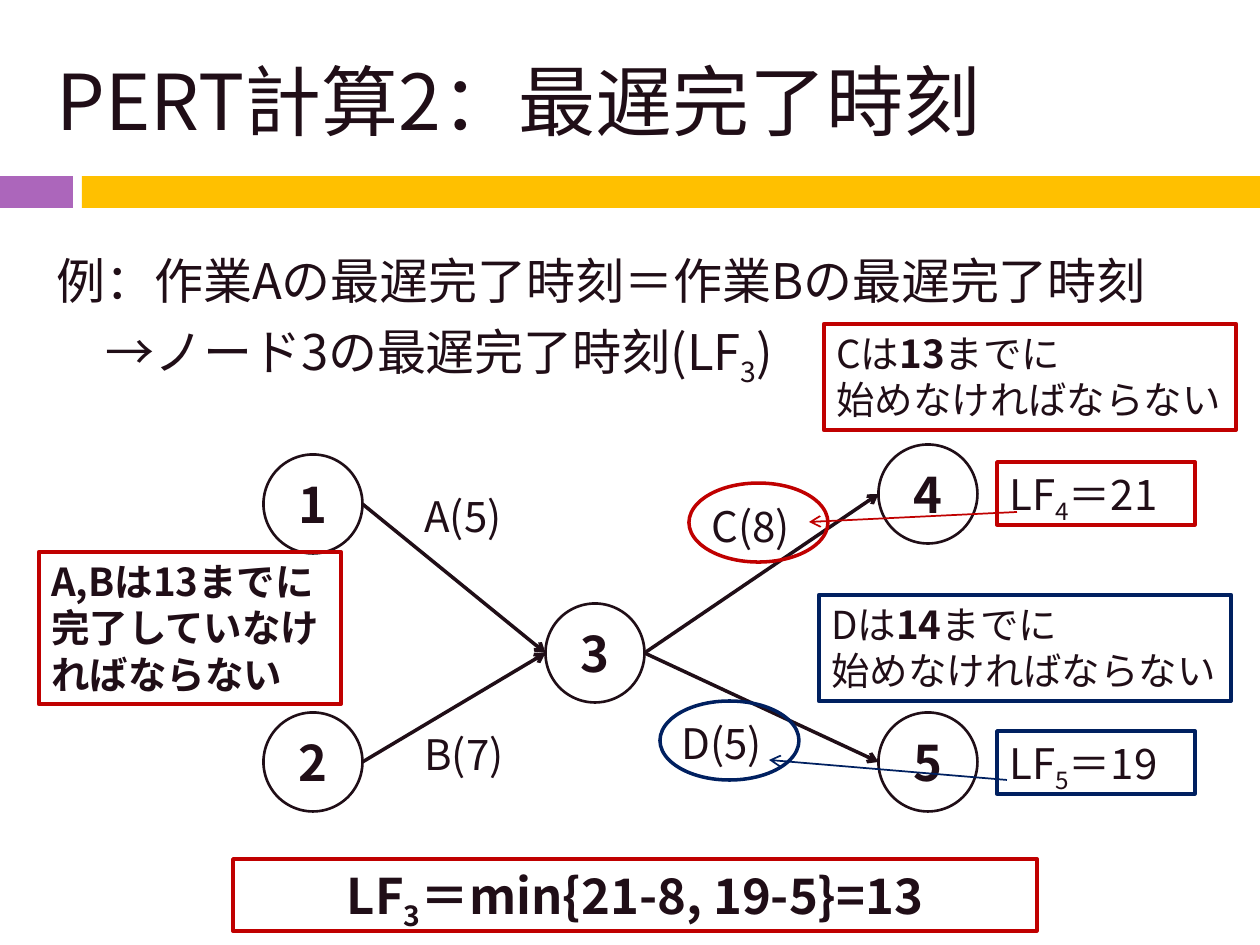
from dataclasses import dataclass

from lxml.etree import SubElement
from pptx import Presentation
from pptx.dml.color import RGBColor
from pptx.enum.shapes import MSO_CONNECTOR, MSO_SHAPE
from pptx.enum.text import MSO_ANCHOR, PP_ALIGN
from pptx.oxml.ns import qn
from pptx.util import Emu, Pt

PX = 914400 / 126


@dataclass(frozen=True)
class Theme:
    font: str = "Noto Sans CJK JP"
    ink: str = "200E17"
    purple: str = "AC66BB"
    amber: str = "FFC000"
    red: str = "C00000"
    navy: str = "002060"
    title: int = 44
    body: int = 28
    label: int = 24
    note: int = 22


THEME = Theme()


def px(value):
    return Emu(round(value * PX))


def write(shape, paragraphs, size, bold=False, align=PP_ALIGN.LEFT,
          anchor=MSO_ANCHOR.TOP):
    """Each paragraph is a list of (text, style); style is "", "sub" or "bold"."""
    frame = shape.text_frame
    frame.word_wrap = True
    frame.vertical_anchor = anchor
    frame.text = "\n".join("" for _ in paragraphs)
    for paragraph, parts in zip(frame.paragraphs, paragraphs):
        paragraph.alignment = align
        for text, style in parts:
            run = paragraph.add_run()
            run.text = text
            run.font.size = Pt(size)
            run.font.name = THEME.font
            run.font.bold = bold or style == "bold"
            run.font.color.rgb = RGBColor.from_string(THEME.ink)
            properties = run.font._element
            SubElement(properties, qn("a:ea")).set("typeface", THEME.font)
            if style == "sub":
                properties.set("baseline", "-25000")
    return frame


def add_text(slide, box, paragraphs, size, **options):
    shape = slide.shapes.add_textbox(*map(px, box))
    return write(shape, paragraphs, size, **options)


def add_outline(slide, kind, box, color, width):
    shape = slide.shapes.add_shape(kind, *map(px, box))
    shape.shadow.inherit = False
    shape.fill.background()
    shape.line.color.rgb = RGBColor.from_string(color)
    shape.line.width = Pt(width)
    return shape


def add_arrow(slide, start, end, color, width):
    arrow = slide.shapes.add_connector(
        MSO_CONNECTOR.STRAIGHT, *map(px, (*start, *end)))
    arrow.line.color.rgb = RGBColor.from_string(color)
    arrow.line.width = Pt(width)
    SubElement(arrow.line._get_or_add_ln(), qn("a:tailEnd")).set("type", "arrow")
    SubElement(arrow._element.spPr, qn("a:effectLst"))


def add_header(slide, left, top, width):
    # Title
    add_text(slide, (left + 44, top + 32, 1171, 136),
             [[("PERT計算2：最遅完了時刻", "")]], THEME.title,
             anchor=MSO_ANCHOR.MIDDLE)
    # Two-colour band
    for start, end, color in ((0, 73, THEME.purple), (82, width, THEME.amber)):
        band = slide.shapes.add_shape(
            MSO_SHAPE.RECTANGLE,
            *map(px, (left + start, top + 176, end - start, 32)))
        band.shadow.inherit = False
        band.fill.solid()
        band.fill.fore_color.rgb = RGBColor.from_string(color)
        band.line.fill.background()


def add_example(slide, box):
    frame = add_text(slide, box, [
        [("例：作業Aの最遅完了時刻＝作業Bの最遅完了時刻", "")],
        [("　→ノード3の最遅完了時刻(LF", ""), ("3", "sub"), (")", "")],
    ], THEME.body)
    for paragraph in frame.paragraphs:
        paragraph.space_before = Pt(7)
        properties = paragraph._p.get_or_add_pPr()
        properties.set("marL", str(px(44)))
        properties.set("indent", str(-px(44)))


def add_network(slide, left, top):
    diameter = 99
    radius = diameter / 2
    centers = {"1": (50, 60), "2": (50, 318), "3": (332, 209),
               "4": (665, 50), "5": (665, 318)}
    centers = {name: (left + x, top + y) for name, (x, y) in centers.items()}

    # Nodes
    for name, (x, y) in centers.items():
        node = add_outline(slide, MSO_SHAPE.OVAL,
                           (x - radius, y - radius, diameter, diameter),
                           THEME.ink, 1.5)
        write(node, [[(name, "")]], THEME.body, bold=True,
              align=PP_ALIGN.CENTER, anchor=MSO_ANCHOR.MIDDLE)

    # Activities run from the right of one node to the left of the next
    activities = (("1", "3", "A(5)", 149, 40), ("2", "3", "B(7)", 149, 278),
                  ("3", "4", "C(8)", 436, 50), ("3", "5", "D(5)", 406, 267))
    for source, target, label, x, y in activities:
        (start_x, start_y), (end_x, end_y) = centers[source], centers[target]
        add_arrow(slide, (start_x + radius, start_y), (end_x - radius, end_y),
                  THEME.ink, 2)
        add_text(slide, (left + x, top + y, 129, 63), [[(label, "")]],
                 THEME.label)


def add_finish_time(slide, box, node, time, color):
    shape = add_outline(slide, MSO_SHAPE.RECTANGLE, box, color, 2)
    write(shape, [[("LF", ""), (node, "sub"), (f"＝{time}", "")]], THEME.label)


def add_start_limit(slide, box, activity, time, color):
    shape = add_outline(slide, MSO_SHAPE.RECTANGLE, box, color, 2.5)
    write(shape, [[(f"{activity}は", ""), (time, "bold"), ("までに", "")],
                  [("始めなければならない", "")]], THEME.note)


def add_branch(slide, activity, node, finish, limit, color,
               finish_box, limit_box, ring_box, arrow):
    """Annotations of one activity that leaves node 3."""
    add_finish_time(slide, finish_box, node, finish, color)
    add_outline(slide, MSO_SHAPE.OVAL, ring_box, color, 2)
    add_start_limit(slide, limit_box, activity, limit, color)
    add_arrow(slide, *arrow, color, 1)


def add_conclusion(slide, deadline_box, result_box):
    deadline = add_outline(slide, MSO_SHAPE.RECTANGLE, deadline_box,
                           THEME.red, 2.5)
    write(deadline, [[("A,Bは13までに完了していなければならない", "")]],
          THEME.note, bold=True)
    result = add_outline(slide, MSO_SHAPE.RECTANGLE, result_box, THEME.red, 2)
    write(result, [[("LF", ""), ("3", "sub"), ("＝min{21-8, 19-5}=13", "")]],
          THEME.body, bold=True, align=PP_ALIGN.CENTER)


def main():
    presentation = Presentation()
    presentation.slide_width = px(1260)
    presentation.slide_height = px(945)
    slide = presentation.slides.add_slide(presentation.slide_layouts[6])

    add_header(slide, 0, 0, 1260)
    add_example(slide, (44, 244, 1171, 596))
    add_network(slide, 263, 444)
    add_branch(slide, "C", "4", "21", "13", THEME.red,
               (997, 462, 198, 63), (824, 324, 412, 106), (689, 483, 139, 79),
               ((1017, 512), (809, 522)))
    add_branch(slide, "D", "5", "19", "14", THEME.navy,
               (997, 731, 198, 63), (819, 595, 412, 106), (660, 701, 139, 79),
               ((1007, 780), (769, 760)))
    add_conclusion(slide, (39, 552, 302, 152), (233, 859, 804, 72))

    presentation.save("out.pptx")


if __name__ == "__main__":
    main()
